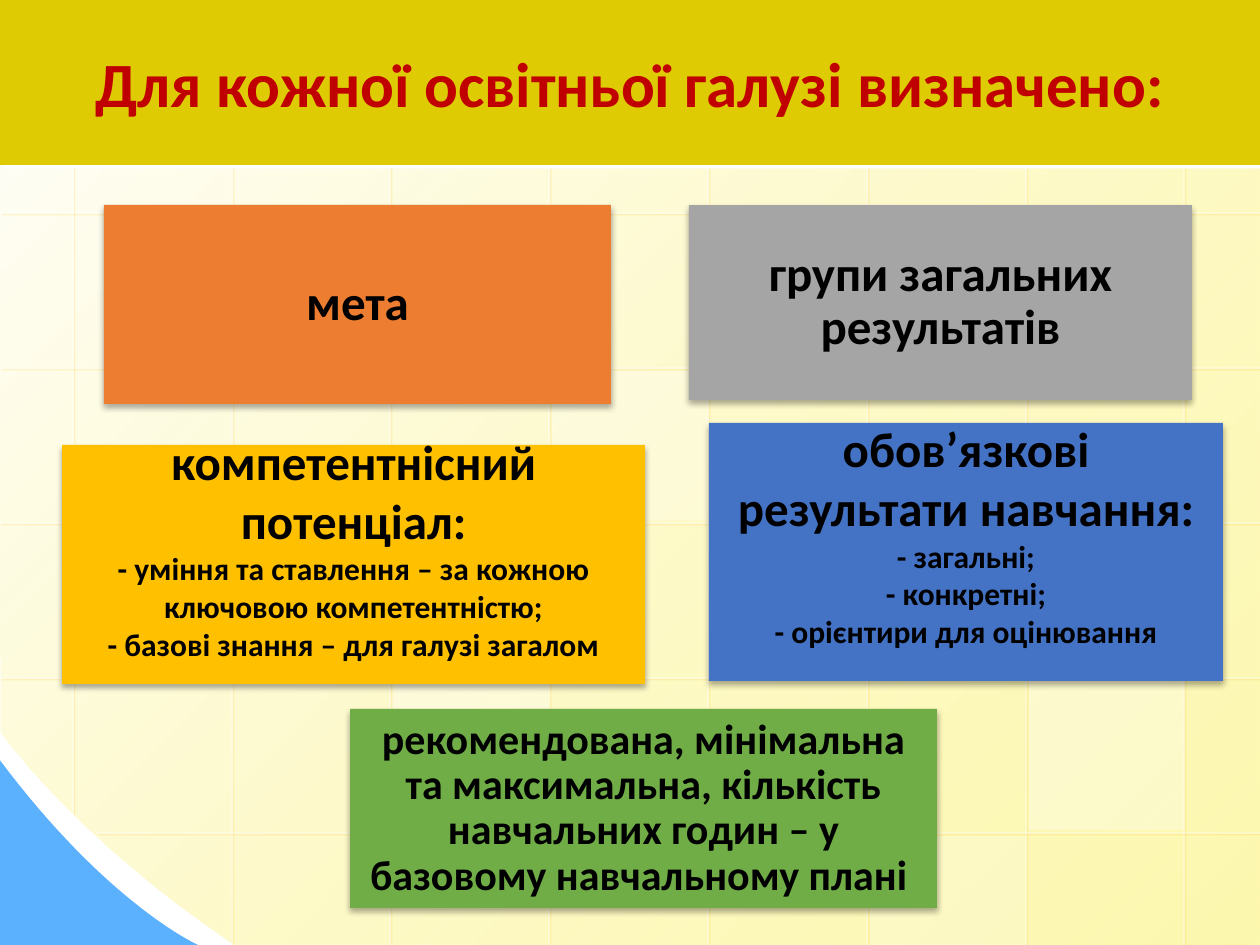
import pptx
import pptx.util
import pptx.dml.color
import pptx.enum.shapes
import pptx.enum.text
import pptx.oxml
import pptx.oxml.ns

HEADING = "Для кожної освітньої галузі визначено:"
CARDS = [
    {"at": (104, 205, 507, 199), "fill": "ED7D31", "lines": [("мета", "large")]},
    {"at": (689, 205, 503, 195), "fill": "A5A5A5",
     "lines": [("групи загальних результатів", "large")]},
    {"at": (62, 445, 583, 239), "fill": "FFC000", "lift": 35,
     "lines": [("компетентнісний потенціал:", "large"),
               ("- уміння та ставлення – за кожною ключовою компетентністю;", "small"),
               ("- базові знання – для галузі загалом", "small")]},
    {"at": (709, 423, 514, 258), "fill": "4472C4", "lift": 35,
     "lines": [("обов’язкові результати навчання:", "large"),
               ("- загальні;", "small"),
               ("- конкретні;", "small"),
               ("- орієнтири для оцінювання", "small")]},
    {"at": (350, 709, 587, 199), "fill": "70AD47", "inset": 13,
     "lines": [("рекомендована, мінімальна та максимальна, кількість "
                "навчальних годин – у базовому навчальному плані ", "medium")]},
]
GLOWING_CELLS = [(3, 1, 25), (6, 3, 30), (5, 4, 20), (2, 3, 30)]

THEME = {
    "font": "Calibri", "text": "000000", "heading": "C00000", "banner": "DECB04",
    "grid": "FFFFFF", "glow": "FFFFFF", "corner": "5CB1FE",
    "paper": ("FFFFFC", "FDF58D"),
    "size": {"heading": 36, "large": 28, "medium": 24, "small": 18},
    "card_shadow": ("000000", 32, 3.5, 2.2, 90),
    "grid_shadow": ("FFC319", 35, 0, 1.4, 45),
    "banner_shadow": ("FFFFFF", 100, 0, 2.8, 45),
}

WIDTH, HEIGHT, BANNER = 1260, 945, 165
COLUMNS = [round(73 + 158.75 * i) for i in range(8)]
ROWS = [213 + 155 * i for i in range(5)]
SCALE = 914400 / 126


def px(length):
    return round(length * SCALE)


def rgb(value):
    return pptx.dml.color.RGBColor.from_string(value)


def set_alpha(color_node, percent):
    alpha = pptx.oxml.parse_xml(
        f'<a:alpha {pptx.oxml.ns.nsdecls("a")} val="{percent * 1000}"/>')
    color_node.append(alpha)


def add_shadow(part, color, alpha, blur, distance, angle):
    properties = part._element.spPr
    for old in properties.findall(pptx.oxml.ns.qn("a:effectLst")):
        properties.remove(old)
    properties.append(pptx.oxml.parse_xml(
        f'<a:effectLst {pptx.oxml.ns.nsdecls("a")}>'
        f'<a:outerShdw blurRad="{round(blur * 12700)}" dist="{round(distance * 12700)}" '
        f'dir="{angle * 60000}" algn="ctr" rotWithShape="0"><a:srgbClr val="{color}">'
        f'<a:alpha val="{alpha * 1000}"/></a:srgbClr></a:outerShdw></a:effectLst>'))


def paint(part, color):
    part.fill.solid()
    part.fill.fore_color.rgb = rgb(color)
    part.line.fill.background()


def add_rectangle(slide, box, color):
    rectangle = slide.shapes.add_shape(
        pptx.enum.shapes.MSO_SHAPE.RECTANGLE, *map(px, box))
    paint(rectangle, color)
    rectangle.shadow.inherit = False
    return rectangle


def bezier(points, steps=32):
    a, b, c, d = points
    for t in (i / steps for i in range(steps + 1)):
        s = 1 - t
        yield tuple(s**3 * a[i] + 3 * s * s * t * b[i] + 3 * s * t * t * c[i] + t**3 * d[i]
                    for i in (0, 1))


def add_outline(slide, points):
    first, *rest = [(px(x), px(y)) for x, y in points]
    builder = slide.shapes.build_freeform(*first, scale=1.0)
    builder.add_line_segments(rest, close=True)
    outline = builder.convert_to_shape()
    outline.shadow.inherit = False
    outline.line.fill.background()
    return outline


def add_grid_line(slide, *ends):
    line = slide.shapes.add_connector(
        pptx.enum.shapes.MSO_CONNECTOR.STRAIGHT, *map(px, ends))
    line.line.color.rgb = rgb(THEME["grid"])
    line.line.width = pptx.util.Pt(0.75)
    set_alpha(line._element.spPr.find(".//" + pptx.oxml.ns.qn("a:srgbClr")), 50)
    add_shadow(line, *THEME["grid_shadow"])


def add_background(slide):
    paper_edge = bezier([(236, 946), (68, 832), (1, 731), (1, 732)])
    paper = add_outline(slide, [(-1, -1), (1260, -1), (1260, 946), *paper_edge])
    paper.fill.gradient()
    paper.fill.gradient_angle = 315
    for stop, color in zip(paper.fill.gradient_stops, THEME["paper"]):
        stop.color.rgb = rgb(color)
    colors = paper._element.spPr.findall(".//" + pptx.oxml.ns.qn("a:srgbClr"))
    set_alpha(colors[-1], 70)

    corner_edge = bezier([(198, 945), (198, 945), (108, 905), (-1, 759)])
    paint(add_outline(slide, [(-1, 945), *corner_edge]), THEME["corner"])

    for x in COLUMNS:
        add_grid_line(slide, x, BANNER, x, 814 if x == COLUMNS[0] else HEIGHT)
    for y in ROWS:
        add_grid_line(slide, 96 if y == ROWS[-1] else 0, y, WIDTH, y)
    for column, row, alpha in GLOWING_CELLS:
        x, y = COLUMNS[column] + 3, ROWS[row] + 3
        cell = add_rectangle(slide, (x, y, 155, min(149, HEIGHT - y)), THEME["glow"])
        set_alpha(cell._element.spPr.find(".//" + pptx.oxml.ns.qn("a:srgbClr")), alpha)


def write(frame, lines, color):
    frame.word_wrap = True
    frame.auto_size = pptx.enum.text.MSO_AUTO_SIZE.NONE
    frame.vertical_anchor = pptx.enum.text.MSO_ANCHOR.MIDDLE
    for index, (text, size) in enumerate(lines):
        paragraph = frame.paragraphs[0] if index == 0 else frame.add_paragraph()
        paragraph.alignment = pptx.enum.text.PP_ALIGN.CENTER
        if len(lines) == 1 and size != "heading":
            paragraph.line_spacing = 0.9
        run = paragraph.add_run()
        run.text = text
        run.font.name = THEME["font"]
        run.font.size = pptx.util.Pt(THEME["size"][size])
        run.font.bold = True
        run.font.color.rgb = rgb(color)


def add_banner(slide):
    banner = slide.shapes.title
    slide.shapes._spTree.append(banner._element)
    banner.left, banner.top, banner.width, banner.height = map(px, (0, 0, WIDTH, BANNER))
    paint(banner, THEME["banner"])
    add_shadow(banner, *THEME["banner_shadow"])
    write(banner.text_frame, [(HEADING, "heading")], THEME["heading"])


def add_card(slide, card):
    rectangle = add_rectangle(slide, card["at"], card["fill"])
    add_shadow(rectangle, *THEME["card_shadow"])
    frame = rectangle.text_frame
    inset = card.get("inset", 15)
    frame.margin_left = frame.margin_right = frame.margin_top = px(inset)
    frame.margin_bottom = px(inset + card.get("lift", 0))
    write(frame, card["lines"], THEME["text"])


def main():
    deck = pptx.Presentation()
    deck.slide_width, deck.slide_height = px(WIDTH), px(HEIGHT)
    slide = deck.slides.add_slide(deck.slide_layouts[5])
    add_background(slide)
    add_banner(slide)
    for card in CARDS:
        add_card(slide, card)
    deck.save("out.pptx")


if __name__ == "__main__":
    main()
